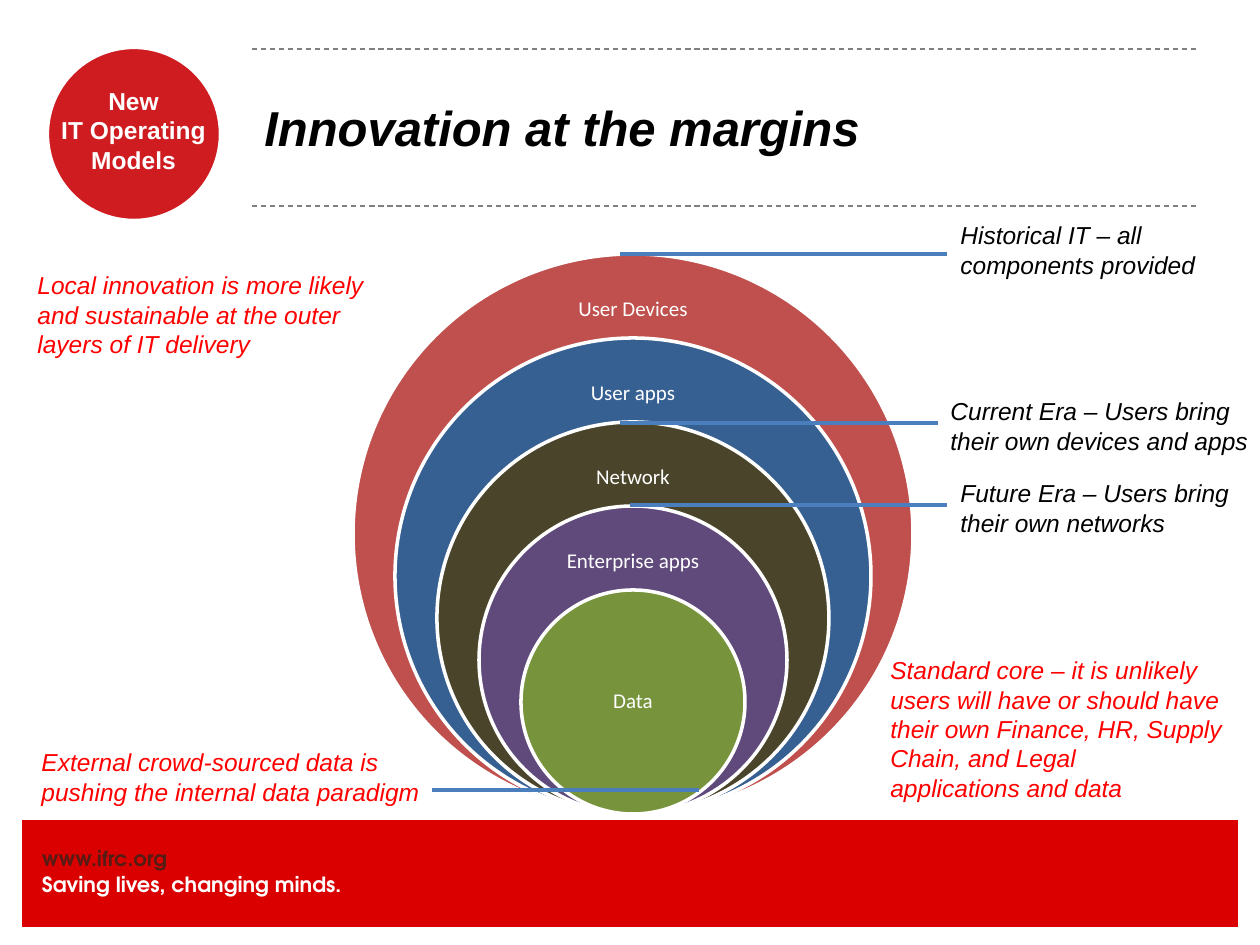
"""Build the slide 'Innovation at the margins' with nested IT layers."""
from lxml import etree
from pptx import Presentation
from pptx import util as u
from pptx.dml.color import RGBColor
from pptx.enum import dml, shapes, text
from pptx.oxml.ns import qn

PX = 914400 / 126
COLORS = {
    "white": "FFFFFF", "black": "000000", "note": "FF0000", "band": "DB0000",
    "badge": "CF1C21", "address": "551C15", "rule": "808080", "pointer": "4B7EBC",
}
RINGS = [
    ("User Devices", "C0504D"),
    ("User apps", "376092"),
    ("Network", "4A452A"),
    ("Enterprise apps", "604A7B"),
    ("Data", "77933C"),
]
RING_CENTER, RING_BOTTOM, RING_OUTER, RING_STEP = 633, 814, 560, 84
LABEL_W, LABEL_H, LABEL_DROP = 210, 56, 56
FOOTER = [("www.ifrc.org", "address"), ("Saving lives, changing minds.", "white")]
NOTES = [
    (948, 214, 268, 72, "black", ["Historical IT – all", "components provided"]),
    (938, 390, 324, 72, "black", ["Current Era – Users bring", "their own devices and apps"]),
    (948, 472, 302, 72, "black", ["Future Era – Users bring", "their own networks"]),
    (878, 649, 365, 161, "note", [
        "Standard core – it is unlikely", "users will have or should have",
        "their own Finance, HR, Supply", "Chain, and Legal", "applications and data"]),
    (25, 264, 360, 102, "note", [
        "Local innovation is more likely", "and sustainable at the outer",
        "layers of IT delivery"]),
    (29, 741, 412, 72, "note", [
        "External crowd-sourced data is", "pushing the internal data paradigm"]),
]
POINTERS = [(620, 947, 254), (620, 938, 423), (630, 947, 505), (432, 699, 790)]
RULES = [(252, 1197, 49), (252, 1197, 206)]


def px(*values):
    return [u.Emu(round(v * PX)) for v in values]


def rgb(name):
    return RGBColor.from_string(COLORS.get(name, name))


def add_filled(s, kind, box, fill, width):
    sp = s.shapes.add_shape(kind, *px(*box))
    sp.shadow.inherit = False
    sp.fill.solid()
    sp.fill.fore_color.rgb = rgb(fill)
    sp.line.color.rgb = rgb("white")
    sp.line.width = u.Pt(width)


def add_text(s, box, lines, size, font="Arial", bold=False, italic=False, wrap=True,
             inset=None, align=None, anchor=text.MSO_ANCHOR.TOP, spacing=None):
    tf = s.shapes.add_textbox(*px(*box)).text_frame
    tf.word_wrap = wrap
    tf.vertical_anchor = anchor
    if inset is not None:
        tf.margin_left = tf.margin_top = tf.margin_right = tf.margin_bottom = px(inset)[0]
    tf.text = "\n".join(line for line, _ in lines)
    for p, (_, color) in zip(tf.paragraphs, lines):
        p.alignment = align
        p.line_spacing = spacing
        for r in p.runs:
            r.font.name, r.font.size = font, u.Pt(size)
            r.font.bold, r.font.italic = bold, italic
            r.font.color.rgb = rgb(color)


def add_line(s, left, right, y, color, width, dash=None):
    line = s.shapes.add_connector(shapes.MSO_CONNECTOR.STRAIGHT, *px(left, y, right, y))
    line.line.color.rgb = rgb(color)
    line.line.width = u.Pt(width)
    if dash:
        line.line.dash_style = dash
    etree.SubElement(line._element.spPr, qn("a:effectLst"))


def add_rings(s):
    for i, (label, color) in enumerate(RINGS):
        size = RING_OUTER - i * RING_STEP
        top = RING_BOTTOM - size
        add_filled(s, shapes.MSO_SHAPE.OVAL,
                   (RING_CENTER - size / 2, top, size, size), color, 2)
        innermost = i == len(RINGS) - 1
        middle = top + (size / 2 if innermost else LABEL_DROP)
        box = (RING_CENTER - LABEL_W / 2, middle - LABEL_H / 2, LABEL_W, LABEL_H)
        add_text(s, box, [(label, "white")], 12, "Calibri", inset=11, spacing=0.9,
                 align=text.PP_ALIGN.CENTER, anchor=text.MSO_ANCHOR.MIDDLE)


def main():
    prs = Presentation()
    prs.slide_width, prs.slide_height = px(1260, 945)
    s = prs.slides.add_slide(prs.slide_layouts[6])

    add_filled(s, shapes.MSO_SHAPE.RECTANGLE, (21, 819, 1218, 109), "band", 0.75)
    add_text(s, (42, 846, 431, 50), FOOTER, 12, "TeX Gyre Adventor", bold=True, inset=0)
    add_filled(s, shapes.MSO_SHAPE.OVAL, (47, 47, 174, 174), "badge", 2.5)
    add_text(s, (54, 86, 159, 89), [("New", "white"), ("IT Operating Models", "white")],
             14, bold=True, inset=0, align=text.PP_ALIGN.CENTER)
    for left, right, y in RULES:
        add_line(s, left, right, y, "rule", 0.75, dml.MSO_LINE.DASH)
    add_text(s, (252, 48, 945, 158), [("Innovation at the margins", "black")], 28,
             bold=True, italic=True, anchor=text.MSO_ANCHOR.MIDDLE)

    add_rings(s)
    for left, right, y in POINTERS:
        add_line(s, left, right, y, "pointer", 2.25)
    for *box, color, lines in NOTES:
        add_text(s, box, [(line, color) for line in lines], 14, italic=True, wrap=False)

    prs.save("out.pptx")


if __name__ == "__main__":
    main()
